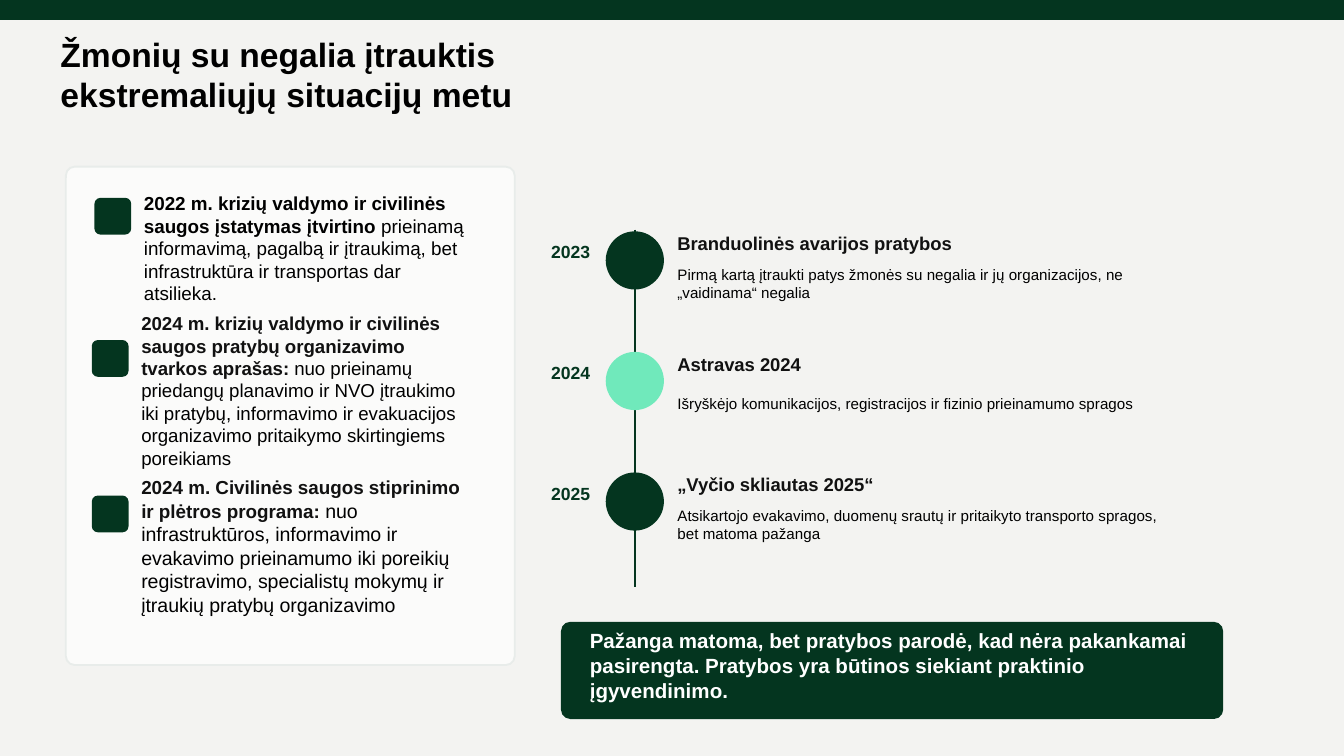
from dataclasses import dataclass

from lxml import etree
from pptx import Presentation
from pptx.dml.color import RGBColor as RGB
from pptx.enum.shapes import MSO_CONNECTOR as LINK, MSO_SHAPE as KIND
from pptx.enum.text import MSO_ANCHOR as ANCHOR, MSO_AUTO_SIZE as FIT, PP_ALIGN as ALIGN
from pptx.oxml.ns import qn
from pptx.util import Pt


@dataclass(frozen=True)
class Theme:
    font: str = "Arial"
    back: RGB = RGB(0xF3, 0xF3, 0xF1)
    green: RGB = RGB(0x04, 0x35, 0x1F)
    mint: RGB = RGB(0x70, 0xE9, 0xBB)
    card: RGB = RGB(0xFB, 0xFB, 0xFA)
    edge: RGB = RGB(0xE8, 0xEC, 0xEA)
    ink: RGB = RGB(0x11, 0x11, 0x11)
    black: RGB = RGB(0, 0, 0)
    white: RGB = RGB(255, 255, 255)
    title: float = 18
    call: float = 11
    head: float = 9.9
    year: float = 9.4
    note: float = 8.1


theme = Theme()
deck = Presentation()
deck.slide_width, deck.slide_height = Pt(720), Pt(405)
slide = deck.slides.add_slide(deck.slide_layouts[5])
slide.background.fill.solid()
slide.background.fill.fore_color.rgb = theme.back


def draw(kind, box, fill, line=None, round=None):
    shape = slide.shapes.add_shape(kind, *map(Pt, box))
    shape.shadow.inherit = False
    shape.fill.solid()
    shape.fill.fore_color.rgb = fill
    shape.line.color.rgb = line or fill
    shape.line.width = Pt(1)
    if round is not None:
        shape.adjustments[0] = round


def write(box, runs, align=ALIGN.LEFT, shape=None):
    """Fill a text box, or the given shape, with (text, size, colour, bold) runs."""
    shape = shape or slide.shapes.add_textbox(0, 0, 0, 0)
    shape.left, shape.top, shape.width, shape.height = map(Pt, box)
    frame = shape.text_frame
    frame.word_wrap = True
    frame.auto_size = FIT.NONE
    frame.vertical_anchor = ANCHOR.MIDDLE
    frame.margin_left = frame.margin_right = frame.margin_top = frame.margin_bottom = 0
    para = frame.paragraphs[0]
    para.alignment = align
    para.font.name = theme.font
    for words, size, color, bold in runs:
        for i, part in enumerate(words.split("\n")):
            if i:
                para.add_line_break()
            run = para.add_run()
            run.text = part
            run.font.size = Pt(size)
            run.font.bold = bold
            run.font.color.rgb = color


# Top band and title
draw(KIND.RECTANGLE, (0, 0, 720, 10), theme.green)
write((32.4, 31, 669.6, 17.3),
      [("Žmonių su negalia įtrauktis\nekstremaliųjų situacijų metu",
        theme.title, theme.black, True)],
      shape=slide.shapes.title)

# Card with the three legal acts
draw(KIND.ROUNDED_RECTANGLE, (35.3, 89.3, 240.5, 267), theme.card, theme.edge, 0.02)
acts = [
    (51.1, 106.5, theme.black, 10.1, "2022 m. krizių valdymo ir civilinės saugos įstatymas įtvirtino",
     10.1, " prieinamą informavimą, pagalbą ir įtraukimą, bet infrastruktūra "
     "ir transportas dar atsilieka."),
    (49.7, 182.7, theme.ink, 10, "2024 m. krizių valdymo ir civilinės saugos pratybų "
     "organizavimo tvarkos aprašas: ",
     10, "nuo prieinamų priedangų planavimo ir NVO įtraukimo iki pratybų, informavimo "
     "ir evakuacijos organizavimo pritaikymo skirtingiems poreikiams"),
    (49.7, 266, theme.ink, 10.1, "2024 m. Civilinės saugos stiprinimo ir plėtros programa: ",
     10.5, "nuo infrastruktūros, informavimo ir evakavimo prieinamumo iki poreikių "
     "registravimo, specialistų mokymų ir įtraukių pratybų organizavimo"),
]
for x, y, ink, big, name, size, body in acts:
    draw(KIND.ROUNDED_RECTANGLE, (x, y, 18.7, 18.7), theme.green, round=0.15)
    write((x + 26, y + 7.4, 172.8, 38.2),
          [(name, big, ink, True), (body, size, theme.black, False)])

# Timeline of exercises
axis = slide.shapes.add_connector(LINK.STRAIGHT, Pt(340), Pt(123.1), Pt(340), Pt(314.6))
axis.line.color.rgb = theme.green
axis.line.width = Pt(1)
etree.SubElement(axis._element.spPr, qn("a:effectLst"))

steps = [
    ("2023", theme.green, "Branduolinės avarijos pratybos",
     "Pirmą kartą įtraukti patys žmonės su negalia ir jų organizacijos, ne „vaidinama“ negalia"),
    ("2024", theme.mint, "Astravas 2024",
     "Išryškėjo komunikacijos, registracijos ir fizinio prieinamumo spragos"),
    ("2025", theme.green, "„Vyčio skliautas 2025“",
     "Atsikartojo evakavimo, duomenų srautų ir pritaikyto transporto spragos, bet matoma pažanga"),
]
for i, (year, dot, name, note) in enumerate(steps):
    y = 124.4 + 64.6 * i
    draw(KIND.OVAL, (325, y, 30.2, 30.2), dot)
    write((279.4, y + 6.2, 36.7, 8.6), [(year, theme.year, theme.green, True)], ALIGN.RIGHT)
    write((362.9, y + 0.9, 151.2, 10.1), [(name, theme.head, theme.ink, True)])
    write((362.9, y + 15.1, 267.1, 24.5), [(note, theme.note, theme.black, False)])

# Closing message
draw(KIND.ROUNDED_RECTANGLE, (301, 333.6, 353.8, 51.1), theme.green, round=0.09)
write((316, 346.3, 324, 20.2),
      [("Pažanga matoma, bet pratybos parodė, kad nėra pakankamai pasirengta. "
        "Pratybos yra būtinos siekiant praktinio įgyvendinimo.",
        theme.call, theme.white, True)])

deck.save("out.pptx")
